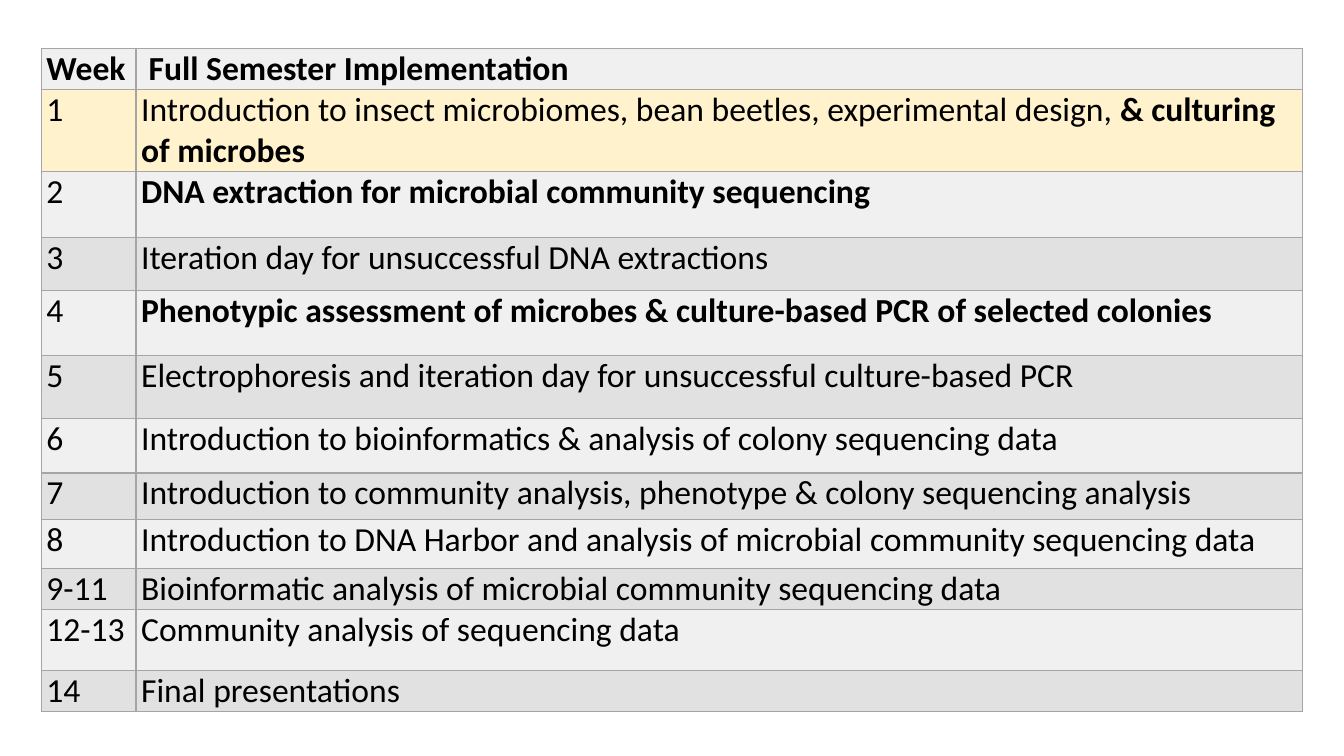
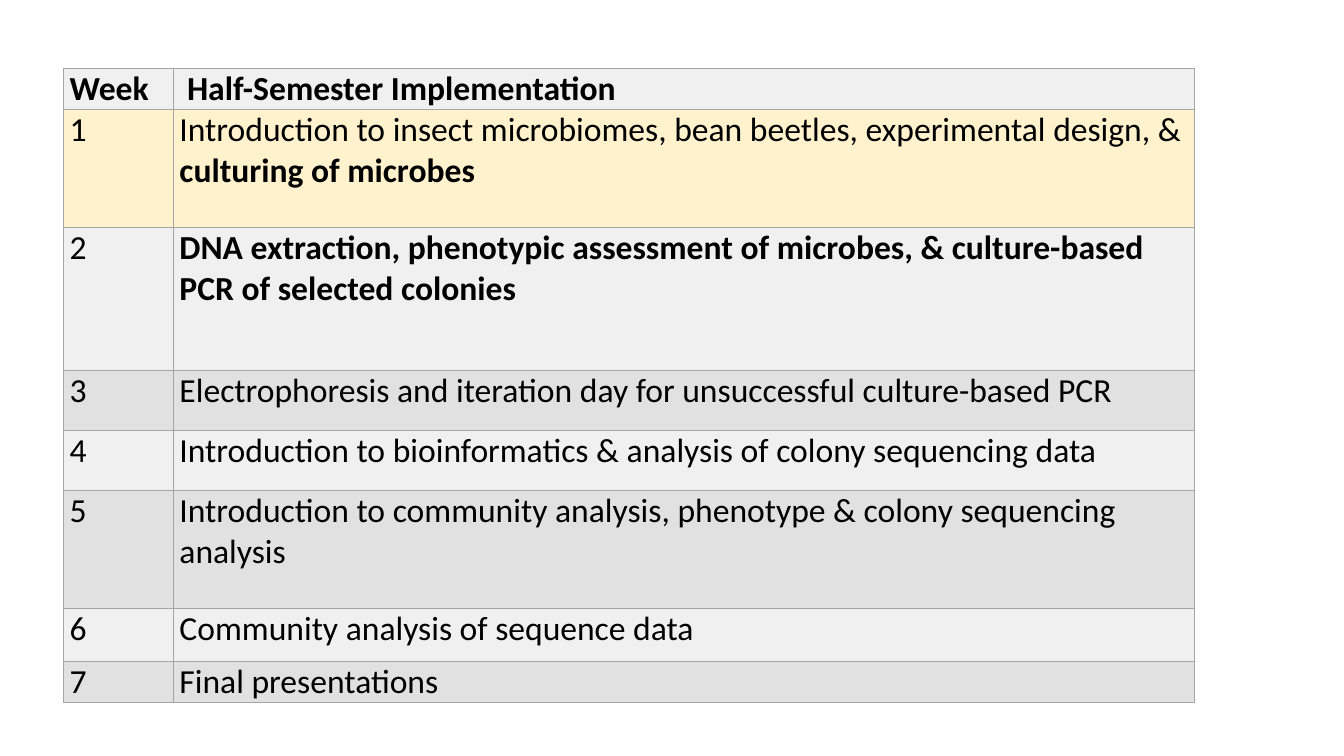
from lxml import etree
from pptx import Presentation
from pptx.dml.color import RGBColor
from pptx.oxml.ns import qn
from pptx.util import Pt

FONT = "Calibri"
FONT_SIZE = 24
TEXT = "000000"
BORDER = "A5A5A5"
BANDS = ("F0F0F0", "E1E1E1")
HIGHLIGHT = "FFF2CC"
HIGHLIGHT_ROW = 1
BLANK_LAYOUT = 6
ONE_LINE = 29.3
TWO_LINES = 2 * ONE_LINE

# Each row: week, regular text, bold text that follows it, height
FULL_SEMESTER = [
    ("1", "Introduction to insect microbiomes, bean beetles, experimental design, ",
     "& culturing of microbes", TWO_LINES),
    ("2", "", "DNA extraction for microbial community sequencing", 47.2),
    ("3", "Iteration day for unsuccessful DNA extractions", "", 37.9),
    ("4", "", "Phenotypic assessment of microbes & culture-based PCR of selected colonies", 46.4),
    ("5", "Electrophoresis and iteration day for unsuccessful culture-based PCR", "", 45),
    ("6", "Introduction to bioinformatics & analysis of colony sequencing data", "", 38.9),
    ("7", "Introduction to community analysis, phenotype & colony sequencing analysis", "", 33.4),
    ("8", "Introduction to DNA Harbor and analysis of microbial community sequencing data", "", 34.6),
    ("9-11", "Bioinformatic analysis of microbial community sequencing data", "", ONE_LINE),
    ("12-13", "Community analysis of sequencing data", "", 43.9),
    ("14", "Final presentations", "", ONE_LINE),
]
HALF_SEMESTER = [
    ("1", "Introduction to insect microbiomes, bean beetles, experimental design, & ",
     "culturing of microbes", 84.2),
    ("2", "", "DNA extraction, phenotypic assessment of microbes, & culture-based PCR "
     "of selected colonies", 102.2),
    ("3", "Electrophoresis and iteration day for unsuccessful culture-based PCR", "", 43),
    ("4", "Introduction to bioinformatics & analysis of colony sequencing data", "", 42.7),
    ("5", "Introduction to community analysis, phenotype & colony sequencing analysis", "", 84.2),
    ("6", "Community analysis of sequence data", "", 37.9),
    ("7", "Final presentations", "", ONE_LINE),
]


def color(hex_value):
    return RGBColor.from_string(hex_value)


def set_borders(cell):
    properties = cell._tc.get_or_add_tcPr()
    for position, side in enumerate(("lnL", "lnR", "lnT", "lnB")):
        line = etree.Element(qn(f"a:{side}"), w=str(Pt(1)))
        fill = etree.SubElement(line, qn("a:solidFill"))
        etree.SubElement(fill, qn("a:srgbClr"), val=BORDER)
        properties.insert(position, line)


def fill_cell(cell, regular, bold, background, inset):
    cell.margin_left = cell.margin_right = Pt(inset)
    cell.margin_top = cell.margin_bottom = 0
    cell.fill.solid()
    cell.fill.fore_color.rgb = color(background)
    set_borders(cell)

    paragraph = cell.text_frame.paragraphs[0]
    paragraph.font.name = FONT
    paragraph.font.size = Pt(FONT_SIZE)
    paragraph.font.color.rgb = color(TEXT)
    for text, is_bold in ((regular, False), (bold, True)):
        if text:
            run = paragraph.add_run()
            run.text = text
            run.font.bold = is_bold


def add_schedule(slide, left, top, column_widths, inset, heading, weeks):
    rows = [("Week", "", heading, ONE_LINE), *weeks]
    total_height = sum(height for *_, height in rows)
    schedule = slide.shapes.add_table(
        len(rows), len(column_widths), Pt(left), Pt(top),
        Pt(sum(column_widths)), Pt(total_height)).table
    schedule.horz_banding = False
    schedule.first_row = False
    for column, width in zip(schedule.columns, column_widths):
        column.width = Pt(width)

    for index, (week, regular, bold, height) in enumerate(rows):
        schedule.rows[index].height = Pt(height)
        background = HIGHLIGHT if index == HIGHLIGHT_ROW else BANDS[index % 2]
        week_parts = ("", week) if index == 0 else (week, "")
        fill_cell(schedule.cell(index, 0), *week_parts, background, inset)
        fill_cell(schedule.cell(index, 1), regular, bold, background, inset)


def main():
    deck = Presentation()
    deck.slide_width, deck.slide_height = Pt(960), Pt(540)
    schedules = [
        (29.5, 34.6, (67.7, 833), 3.6, " Full Semester Implementation", FULL_SEMESTER),
        (45.4, 49, (78.5, 729.4), 4.3, " Half-Semester Implementation", HALF_SEMESTER),
    ]
    for schedule in schedules:
        slide = deck.slides.add_slide(deck.slide_layouts[BLANK_LAYOUT])
        add_schedule(slide, *schedule)
    deck.save("out.pptx")


if __name__ == "__main__":
    main()
